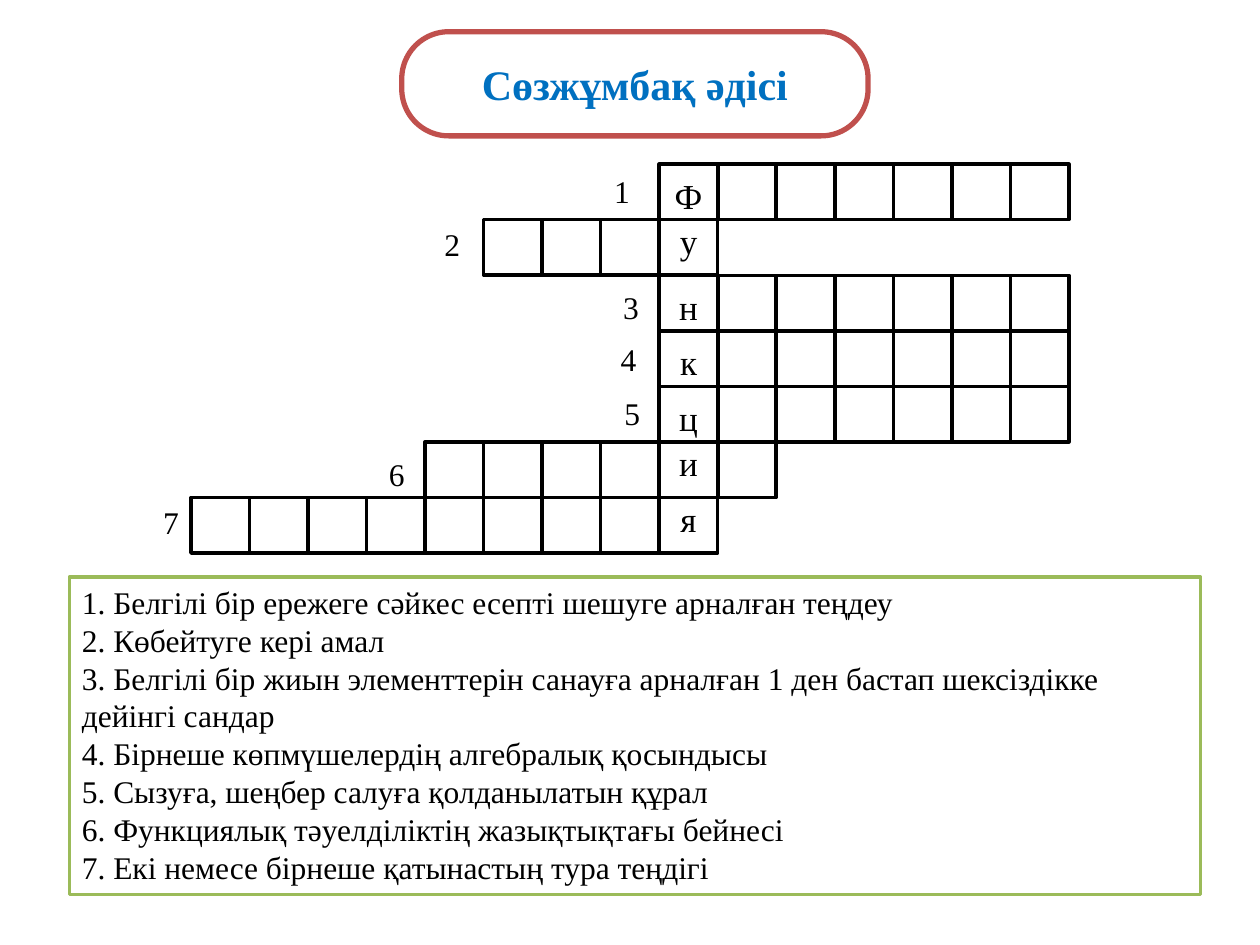
from dataclasses import dataclass

from pptx import Presentation
from pptx.dml.color import RGBColor
from pptx.enum.shapes import MSO_SHAPE as SHAPE
from pptx.enum.text import MSO_ANCHOR as ANCHOR, PP_ALIGN as ALIGN
from pptx.util import Cm, Pt


@dataclass(frozen=True)
class Theme:
    font: str = "Times New Roman"
    paper: RGBColor = RGBColor(0xFF, 0xFF, 0xFF)
    ink: RGBColor = RGBColor(0x00, 0x00, 0x00)
    title: RGBColor = RGBColor(0x00, 0x70, 0xC0)
    title_frame: RGBColor = RGBColor(0xC0, 0x50, 0x4D)
    clue_frame: RGBColor = RGBColor(0x9B, 0xBB, 0x59)
    title_size: Pt = Pt(24)
    letter_size: Pt = Pt(20)
    body_size: Pt = Pt(18)
    frame_width: Pt = Pt(3)
    line_width: Pt = Pt(2)


@dataclass(frozen=True)
class Word:
    letter: str
    before: int
    after: int
    number_dx: float
    number_dy: float
    raised: bool = False


THEME = Theme()
TITLE = "Сөзжұмбақ әдісі"
WORDS = [
    Word("Ф", 0, 6, -1.16, 0.04),
    Word("у", 3, 0, -1.04, -0.01, raised=True),
    Word("н", 0, 6, -0.98, 0.14),
    Word("к", 0, 6, -1.03, 0.06),
    Word("ц", 0, 6, -0.95, 0.03),
    Word("и", 4, 1, -0.98, 0.13, raised=True),
    Word("я", 8, 0, -0.81, -0.02, raised=True),
]
CLUES = [
    "Белгілі бір ережеге сәйкес есепті шешуге арналған теңдеу",
    "Көбейтуге кері амал",
    "Белгілі бір жиын элементтерін санауға арналған 1 ден бастап шексіздікке дейінгі сандар",
    "Бірнеше көпмүшелердің алгебралық қосындысы",
    "Сызуға, шеңбер салуға қолданылатын құрал",
    "Функциялық тәуелділіктің жазықтықтағы бейнесі",
    "Екі немесе бірнеше қатынастың тура теңдігі",
]


def add_frame(slide, kind, left, top, width, height, color, weight):
    sp = slide.shapes.add_shape(kind, left, top, width, height)
    sp.shadow.inherit = False
    sp.fill.solid()
    sp.fill.fore_color.rgb = THEME.paper
    sp.line.color.rgb = color
    sp.line.width = weight
    return sp


def write(p, text, size, color=THEME.ink, bold=False, align=ALIGN.LEFT):
    p.text = text
    p.alignment = align
    p.font.name = THEME.font
    p.font.size = size
    p.font.bold = bold
    p.font.color.rgb = color


def add_title(slide, left, top, width, height):
    sp = add_frame(slide, SHAPE.ROUNDED_RECTANGLE, left, top, width, height,
                   THEME.title_frame, THEME.frame_width)
    sp.adjustments[0] = 0.45
    tf = sp.text_frame
    tf.vertical_anchor = ANCHOR.MIDDLE
    write(tf.paragraphs[0], TITLE, THEME.title_size, THEME.title, True, ALIGN.CENTER)


def add_letter(cell, word):
    tf = cell.text_frame
    tf.margin_left = tf.margin_right = tf.margin_top = tf.margin_bottom = 0
    tf.vertical_anchor = ANCHOR.TOP if word.raised else ANCHOR.MIDDLE
    p = tf.paragraphs[0]
    write(p, word.letter, THEME.letter_size, align=ALIGN.CENTER)
    p.line_spacing = 1.0 if word.raised else 1.15


def add_number(slide, number, left, top):
    tf = slide.shapes.add_textbox(left, top, Cm(0.84), Cm(1.03)).text_frame
    tf.word_wrap = False
    write(tf.paragraphs[0], str(number), THEME.body_size)


def add_crossword(slide, left, top, width, height):
    most_before = max(word.before for word in WORDS)
    columns = most_before + 1 + max(word.after for word in WORDS)
    cell_w, cell_h = width // columns, height // len(WORDS)
    for row, word in enumerate(WORDS):
        y = top + row * cell_h
        first = most_before - word.before
        for column in range(first, most_before + word.after + 1):
            cell = add_frame(slide, SHAPE.RECTANGLE, left + column * cell_w, y,
                             cell_w, cell_h, THEME.ink, THEME.line_width)
            if column == most_before:
                add_letter(cell, word)
        add_number(slide, row + 1, left + first * cell_w + Cm(word.number_dx),
                   y + Cm(word.number_dy))


def add_clues(slide, left, top, width, height):
    sp = add_frame(slide, SHAPE.RECTANGLE, left, top, width, height,
                   THEME.clue_frame, THEME.line_width)
    tf = sp.text_frame
    tf.word_wrap = True
    tf.vertical_anchor = ANCHOR.TOP
    for i, clue in enumerate(CLUES):
        p = tf.add_paragraph() if i else tf.paragraphs[0]
        write(p, f"{i + 1}. {clue}", THEME.body_size)


def main():
    prs = Presentation()
    prs.slide_width, prs.slide_height = Cm(25.4), Cm(19.05)
    slide = prs.slides.add_slide(prs.slide_layouts[6])
    add_title(slide, Cm(8.1), Cm(0.64), Cm(9.4), Cm(2.1))
    add_crossword(slide, Cm(3.85), Cm(3.31), Cm(17.7), Cm(7.84))
    add_clues(slide, Cm(1.4), Cm(11.63), Cm(22.8), Cm(6.4))
    prs.save("out.pptx")


if __name__ == "__main__":
    main()
